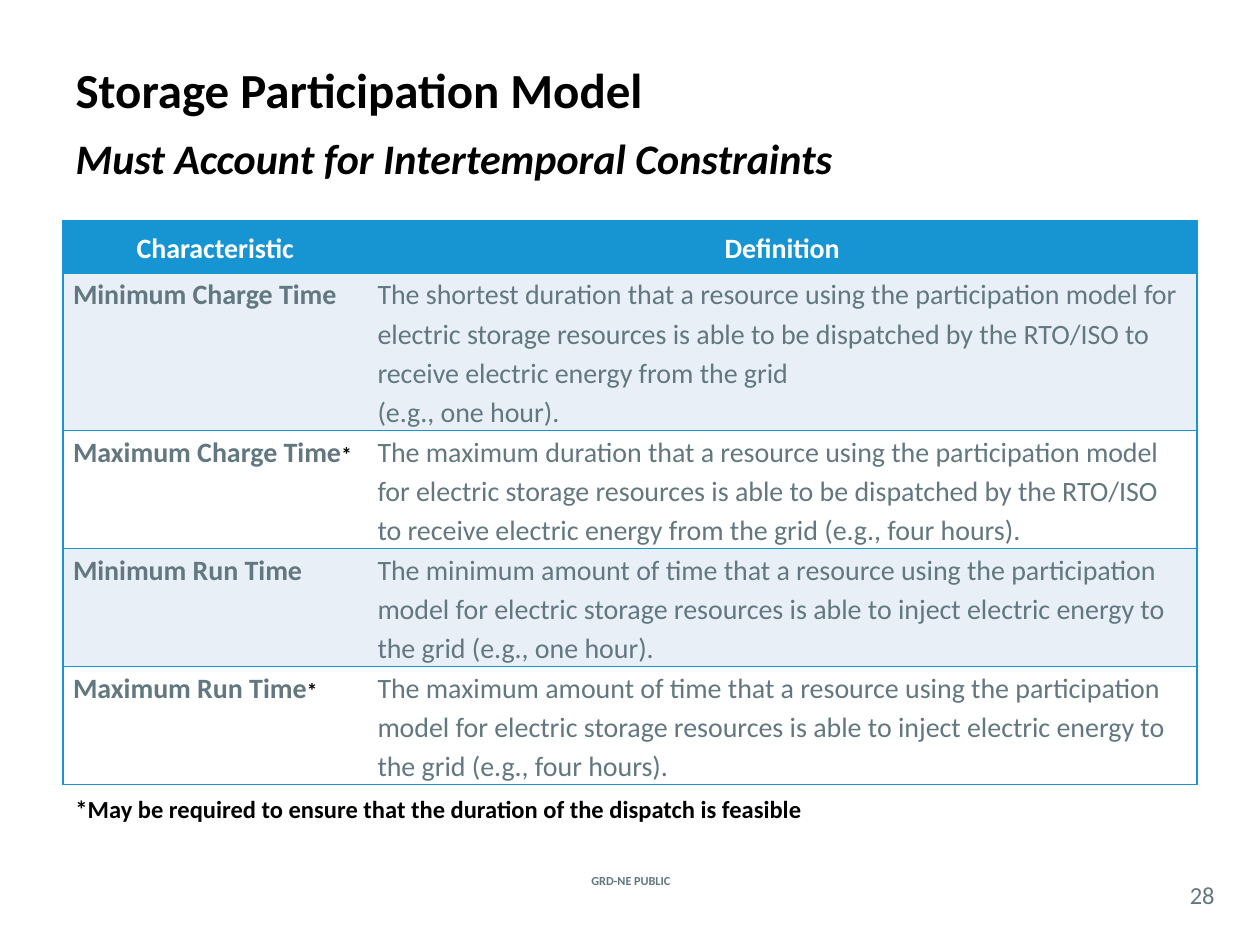
from dataclasses import dataclass

from lxml.etree import SubElement
from pptx import Presentation
from pptx.dml.color import RGBColor
from pptx.enum.text import MSO_ANCHOR, MSO_AUTO_SIZE, PP_ALIGN
from pptx.oxml.ns import qn
from pptx.util import Pt

FONT = "Calibri"
BLUE, PALE, WHITE = "1795D2", "E8EFF7", "FFFFFF"
GREY, BLACK = "62777F", "000000"


@dataclass
class Constraint:
    name: str
    definition: str
    marked: bool = False


@dataclass
class Label:
    text: str
    frame: tuple
    size: float
    color: str
    bold: bool = True
    align: PP_ALIGN = PP_ALIGN.LEFT
    margins: tuple = (7.2, 3.6)
    anchor: MSO_ANCHOR = MSO_ANCHOR.MIDDLE


CONSTRAINTS = [
    Constraint("Minimum Charge Time",
               "The shortest duration that a resource using the participation model for "
               "electric storage resources is able to be dispatched by the RTO/ISO to "
               "receive electric energy from the grid \v(e.g., one hour)."),
    Constraint("Maximum Charge Time",
               "The maximum duration that a resource using the participation model for "
               "electric storage resources is able to be dispatched by the RTO/ISO to "
               "receive electric energy from the grid (e.g., four hours).", True),
    Constraint("Minimum Run Time",
               "The minimum amount of time that a resource using the participation model for "
               "electric storage resources is able to inject electric energy to the grid "
               "(e.g., one hour)."),
    Constraint("Maximum Run Time",
               "The maximum amount of time that a resource using the participation model for "
               "electric storage resources is able to inject electric energy to the grid "
               "(e.g., four hours).", True),
]

LABELS = [
    Label("GRD-NE PUBLIC", (307.5, 484, 106, 39), 7, GREY, align=PP_ALIGN.CENTER),
    Label("28", (672, 501, 30, 21), 14, GREY, False, PP_ALIGN.CENTER, (0, 0)),
    Label("*May be required to ensure that the duration of the dispatch is feasible",
          (36, 450, 624, 24.5), 14, BLACK, anchor=MSO_ANCHOR.TOP),
]


def rgb(color: str) -> RGBColor:
    return RGBColor.from_string(color)


def style_span(span, size: float, color: str, bold: bool, italic: bool = False) -> None:
    font = span.font
    font.name, font.size, font.bold, font.italic = FONT, Pt(size), bold, italic
    font.color.rgb = rgb(color)


def place(shape, left: float, top: float, width: float, height: float) -> None:
    shape.left, shape.top, shape.width, shape.height = map(Pt, (left, top, width, height))


def fill_placeholder(box, text: str, frame: tuple, size: float,
                     anchor: MSO_ANCHOR, italic: bool = False) -> None:
    place(box, *frame)
    text_frame = box.text_frame
    text_frame.text = text
    text_frame.auto_size = MSO_AUTO_SIZE.NONE
    text_frame.vertical_anchor = anchor
    para = text_frame.paragraphs[0]
    properties = para._p.get_or_add_pPr()
    properties.set("marL", "0")
    properties.set("indent", "0")
    SubElement(properties, qn("a:buNone"))
    para.alignment = PP_ALIGN.LEFT
    para.space_before = Pt(0)
    style_span(para.runs[0], size, BLACK, True, italic)


def add_label(page, label: Label) -> None:
    box = page.shapes.add_textbox(*map(Pt, label.frame))
    text_frame = box.text_frame
    text_frame.word_wrap = True
    text_frame.vertical_anchor = label.anchor
    text_frame.margin_left = text_frame.margin_right = Pt(label.margins[0])
    text_frame.margin_top = text_frame.margin_bottom = Pt(label.margins[1])
    text_frame.text = label.text
    para = text_frame.paragraphs[0]
    para.alignment = label.align
    style_span(para.runs[0], label.size, label.color, label.bold)


def set_borders(cell, hidden_side: str) -> None:
    properties = cell._tc.get_or_add_tcPr()
    for position, side in enumerate("LRTB"):
        line = SubElement(properties, qn(f"a:ln{side}"), w=str(Pt(1)))
        if side == hidden_side:
            SubElement(line, qn("a:noFill"))
        else:
            solid = SubElement(line, qn("a:solidFill"))
            SubElement(solid, qn("a:srgbClr"), val=BLUE)
        properties.insert(position, line)


def fill_cell(cell, text: str, fill: str, color: str, bold: bool,
              hidden_side: str, header: bool = False):
    cell.fill.solid()
    cell.fill.fore_color.rgb = rgb(fill)
    cell.margin_left = cell.margin_right = Pt(5.75)
    cell.margin_top = cell.margin_bottom = Pt(0)
    cell.vertical_anchor = MSO_ANCHOR.MIDDLE if header else MSO_ANCHOR.TOP
    cell.text_frame.text = text
    para = cell.text_frame.paragraphs[0]
    para.alignment = PP_ALIGN.CENTER if header else PP_ALIGN.LEFT
    para.line_spacing = 1.15
    para.space_after = Pt(10)
    for span in para.runs:
        style_span(span, 16, color, bold)
    set_borders(cell, hidden_side)
    return para


def add_constraint_table(page) -> None:
    frame = page.shapes.add_table(len(CONSTRAINTS) + 1, 2, Pt(36), Pt(126), Pt(648), Pt(281))
    table = frame.table
    for column, width in zip(table.columns, (174, 474)):
        column.width = Pt(width)
    for index, row in enumerate(table.rows):
        row.height = Pt(62.75 if index else 30)

    # The inner vertical border stays hidden on both sides
    for index, (text, hidden) in enumerate((("Characteristic", "R"), ("Definition", "L"))):
        fill_cell(table.cell(0, index), text, BLUE, WHITE, True, hidden, header=True)
    for index, constraint in enumerate(CONSTRAINTS, start=1):
        fill = PALE if index % 2 else WHITE
        para = fill_cell(table.cell(index, 0), constraint.name, fill, GREY, True, "R")
        if constraint.marked:
            star = para.add_run()
            star.text = "*"
            style_span(star, 12, BLACK, True)
        fill_cell(table.cell(index, 1), constraint.definition, fill, GREY, False, "L")


def main() -> None:
    deck = Presentation()
    deck.slide_width, deck.slide_height = Pt(720), Pt(540)
    page = deck.slides.add_slide(deck.slide_layouts[1])

    # Title and subtitle
    fill_placeholder(page.shapes.title, "Storage Participation Model",
                     (36, 30, 648, 42), 28, MSO_ANCHOR.MIDDLE)
    fill_placeholder(page.placeholders[1], "Must Account for Intertemporal Constraints",
                     (36, 72, 648, 36), 24, MSO_ANCHOR.TOP, italic=True)

    # Table, footnote and footer
    add_constraint_table(page)
    for label in LABELS:
        add_label(page, label)

    deck.save("out.pptx")


if __name__ == "__main__":
    main()
